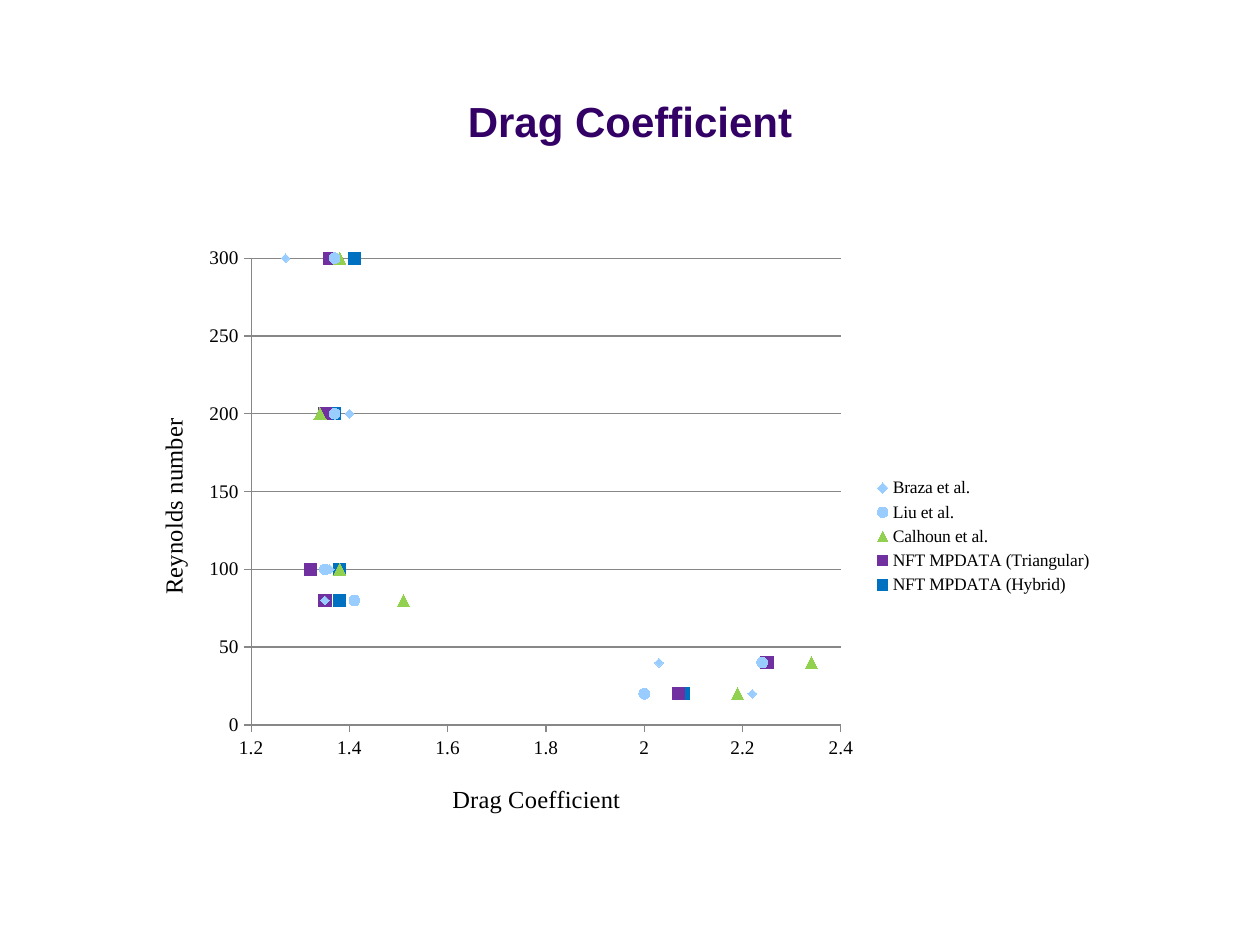
from lxml import etree
from pptx import Presentation
from pptx import util as u
from pptx.chart.data import XyChartData
from pptx.dml.color import RGBColor
from pptx.enum import chart as ch
from pptx.enum import text
from pptx.oxml.ns import qn

WIDTH, HEIGHT = 10, 7.5
TITLE = "Drag Coefficient"
X_TITLE, Y_TITLE = "Drag Coefficient", "Reynolds number"
SERIF = "Times New Roman"
GREY = "878787"

REYNOLDS = [20, 40, 80, 100, 200, 300]
MARK = ch.XL_MARKER_STYLE
# name, drag coefficients, marker, marker size, colour
STUDIES = [
    ("Braza et al.", [2.22, 2.03, 1.35, 1.36, 1.4, 1.27], MARK.DIAMOND, 5, "99CCFF"),
    ("Liu et al.", [2, 2.24, 1.41, 1.35, 1.37, 1.37], MARK.CIRCLE, 6, "99CCFF"),
    ("Calhoun et al.", [2.19, 2.34, 1.51, 1.38, 1.34, 1.38], MARK.TRIANGLE, 7, "92D050"),
    ("NFT MPDATA (Triangular)", [2.07, 2.25, 1.35, 1.32, 1.35, 1.36], MARK.SQUARE, 7, "7030A0"),
    ("NFT MPDATA (Hybrid)", [2.08, 2.25, 1.38, 1.38, 1.37, 1.41], MARK.SQUARE, 7, "0070C0"),
]


def rgb(value):
    return RGBColor.from_string(value)


def set_font(font, size, name=SERIF, color="000000", bold=False):
    font.size, font.name, font.bold = u.Pt(size), name, bold
    font.color.rgb = rgb(color)


def place(element, x, y, w=None, h=None, inner=False):
    """Give a chart part a manual layout, in shares of the chart's size."""
    for old in element.findall(qn("c:layout")):
        element.remove(old)
    layout = etree.Element(qn("c:layout"))
    manual = etree.SubElement(layout, qn("c:manualLayout"))
    settings = [("layoutTarget", "inner")] if inner else []
    settings += [("xMode", "edge"), ("yMode", "edge"), ("x", x), ("y", y), ("w", w), ("h", h)]
    for tag, value in settings:
        if value is not None:
            etree.SubElement(manual, qn("c:" + tag)).set("val", str(value))
    leading = (qn("c:tx"), qn("c:legendPos"))
    element.insert(sum(child.tag in leading for child in element), layout)


def style_axis(axis, title, low, high, step, title_at):
    axis.minimum_scale, axis.maximum_scale, axis.major_unit = low, high, step
    axis.major_tick_mark = ch.XL_TICK_MARK.OUTSIDE
    axis.minor_tick_mark = ch.XL_TICK_MARK.NONE
    axis.tick_label_position = ch.XL_TICK_LABEL_POSITION.LOW
    axis.tick_labels.number_format = "General"
    axis.tick_labels.number_format_is_linked = False
    axis.crosses = ch.XL_AXIS_CROSSES.MINIMUM
    axis.format.line.color.rgb = rgb(GREY)
    axis.format.line.width = u.Pt(0.75)
    set_font(axis.tick_labels.font, 11)
    heading = axis.axis_title.text_frame
    heading.text = title
    set_font(heading.paragraphs[0].font, 14)
    place(axis.axis_title._element, *title_at)


def add_title(slide):
    box = slide.shapes.add_textbox(0, u.Inches(0.67), u.Inches(WIDTH), u.Inches(0.58))
    frame = box.text_frame
    frame.word_wrap = True
    frame.vertical_anchor = text.MSO_ANCHOR.MIDDLE
    heading = frame.paragraphs[0]
    heading.text = TITLE
    heading.alignment = text.PP_ALIGN.CENTER
    set_font(heading.font, 24, "Arial", "330066", True)


def add_drag_chart(slide):
    data = XyChartData()
    for name, drags, *_ in STUDIES:
        series = data.add_series(name)
        for drag, reynolds in zip(drags, REYNOLDS):
            series.add_data_point(drag, reynolds)
    area = [u.Inches(n) for n in (0.98, 1.86, 7.8, 4.75)]
    chart = slide.shapes.add_chart(ch.XL_CHART_TYPE.XY_SCATTER, *area, data).chart
    chart.has_title = False
    set_font(chart.font, 10, "Arial")
    chart.plots[0].vary_by_categories = False

    for series, (_, _, shape, size, color) in zip(chart.plots[0].series, STUDIES):
        series.smooth = False
        series.format.line.fill.background()
        series.marker.style, series.marker.size = shape, size
        series.marker.format.fill.solid()
        series.marker.format.fill.fore_color.rgb = rgb(color)
        series.marker.format.line.color.rgb = rgb(color)

    style_axis(chart.category_axis, X_TITLE, 1.2, 2.4, 0.2, (0.33, 0.91))
    style_axis(chart.value_axis, Y_TITLE, 0, 300, 50, (0.03, 0.3))
    chart.category_axis.has_major_gridlines = False
    chart.value_axis.has_major_gridlines = True
    grid = chart.value_axis.major_gridlines.format.line
    grid.color.rgb, grid.width = rgb(GREY), u.Pt(0.75)

    chart.has_legend = True
    chart.legend.position = ch.XL_LEGEND_POSITION.RIGHT
    chart.legend.include_in_layout = False
    set_font(chart.legend.font, 10)
    place(chart.legend._element, 0.76, 0.4, 0.23, 0.21)
    plot_area = chart._chartSpace.find(".//" + qn("c:plotArea"))
    place(plot_area, 0.13, 0.04, 0.6, 0.78, inner=True)


def main():
    deck = Presentation()
    deck.slide_width, deck.slide_height = u.Inches(WIDTH), u.Inches(HEIGHT)
    slide = deck.slides.add_slide(deck.slide_layouts[6])
    add_title(slide)
    add_drag_chart(slide)
    deck.save("out.pptx")


if __name__ == "__main__":
    main()
